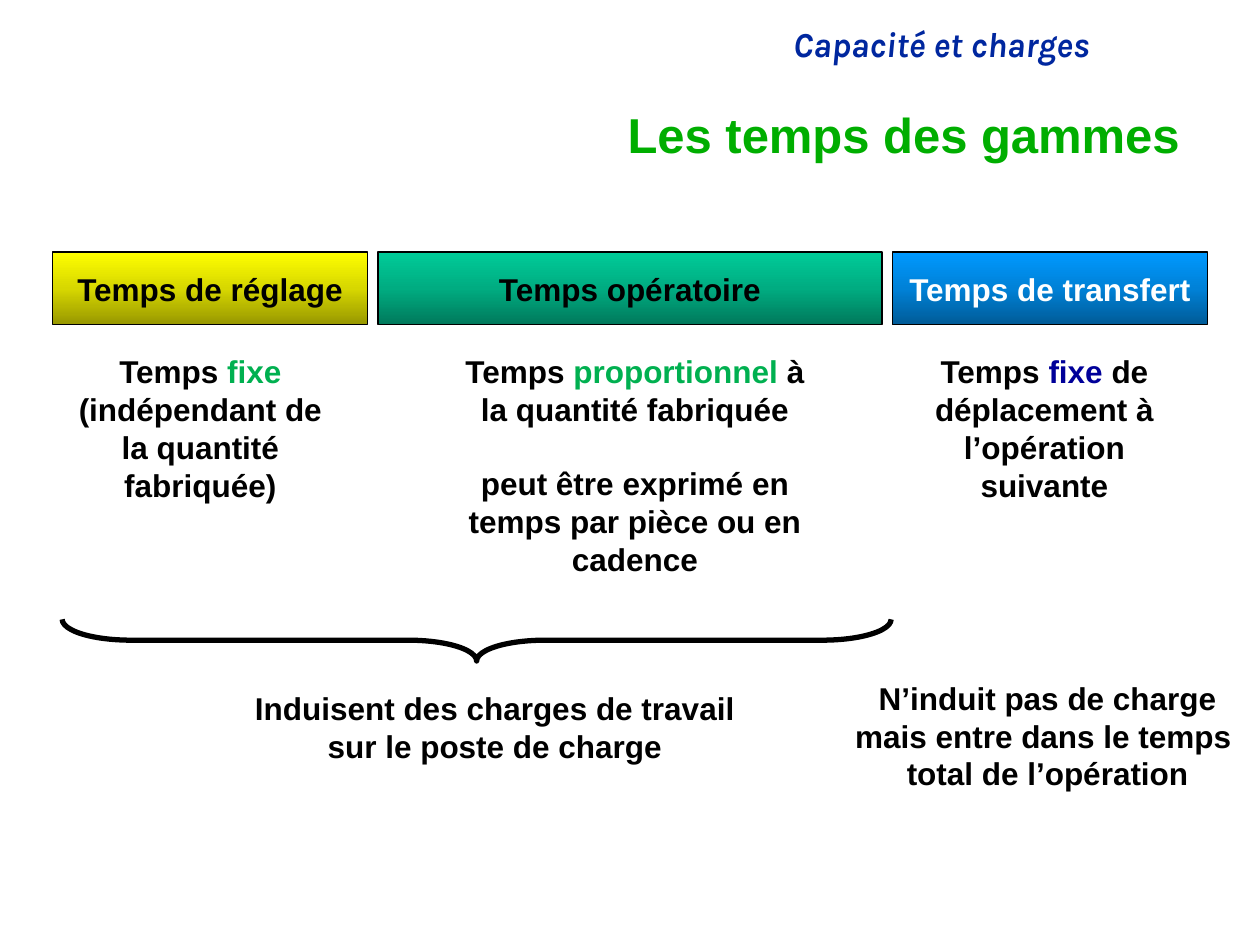
import copy
from dataclasses import dataclass

import pptx
import pptx.dml.color
import pptx.enum.shapes
import pptx.enum.text
import pptx.oxml.ns
import pptx.presentation
import pptx.slide
import pptx.text.text
import pptx.util

Cm = pptx.util.Cm
Pt = pptx.util.Pt
RGBColor = pptx.dml.color.RGBColor
Align = pptx.enum.text.PP_ALIGN
Anchor = pptx.enum.text.MSO_ANCHOR
ShapeType = pptx.enum.shapes.MSO_SHAPE

BLACK = RGBColor(0x00, 0x00, 0x00)
WHITE = RGBColor(0xFF, 0xFF, 0xFF)
NAVY = RGBColor(0x00, 0x27, 0x9F)
TITLE_GREEN = RGBColor(0x00, 0xAE, 0x00)
ACCENT_GREEN = RGBColor(0x00, 0xB0, 0x50)
ACCENT_BLUE = RGBColor(0x00, 0x00, 0x99)
YELLOWS = (RGBColor(0x97, 0x97, 0x00), RGBColor(0xD7, 0xD7, 0x00), RGBColor(0xFF, 0xFF, 0x00))
GREENS = (RGBColor(0x00, 0x79, 0x5B), RGBColor(0x00, 0xAC, 0x81), RGBColor(0x00, 0xCC, 0x99))
BLUES = (RGBColor(0x00, 0x5B, 0x97), RGBColor(0x00, 0x81, 0xD7), RGBColor(0x00, 0x99, 0xFF))

BODY_FONT = {"name": "Arial", "size": Pt(18), "bold": True}
TITLE_FONT = BODY_FONT | {"size": Pt(28)}
HEADER_FONT = {"name": "Karla", "size": Pt(20), "bold": True, "italic": True}
CENTRED = {"alignment": Align.CENTER}
RIGHT_ALIGNED = {"alignment": Align.RIGHT, "line_spacing": 0.9}

BAR_LEFT, BAR_TOP, BAR_HEIGHT, BAR_GAP = 1.06, 5.08, 1.47, 0.21
COLUMN_TOP = 6.98
BLANK_LINE = Pt(20.7)


@dataclass
class Run:
    text: str
    color: RGBColor = BLACK


@dataclass
class TimeBar:
    label: Run
    width: float
    gradient: tuple[RGBColor, ...]


@dataclass
class TextBlock:
    left: float
    top: float
    width: float
    height: float
    paragraphs: list[list[Run]]
    wrap: bool = True
    gap: pptx.util.Length = Pt(0)


HEADER = TextBlock(2.97, 0.43, 19.25, 1.02, [[Run("Capacité et charges", NAVY)]])
TITLE = TextBlock(3.91, 2.13, 20.12, 1.27, [[Run("Les temps des gammes", TITLE_GREEN)]])

BARS = [
    TimeBar(Run("Temps de réglage"), 6.35, YELLOWS),
    TimeBar(Run("Temps opératoire"), 10.16, GREENS),
    TimeBar(Run("Temps de transfert", WHITE), 6.35, BLUES),
]

BLOCKS = [
    TextBlock(1.27, COLUMN_TOP, 5.54, 3.3, [
        [Run("Temps "), Run("fixe", ACCENT_GREEN)],
        [Run("(indépendant de la quantité fabriquée)")],
    ]),
    TextBlock(9.09, COLUMN_TOP, 7.42, 4.83, [
        [Run("Temps "), Run("proportionnel", ACCENT_GREEN), Run(" à la quantité fabriquée")],
        [Run("peut être exprimé en temps par pièce ou en cadence")],
    ], gap=BLANK_LINE),
    TextBlock(17.98, COLUMN_TOP, 6.15, 3.3, [
        [Run("Temps "), Run("fixe", ACCENT_BLUE), Run(" de déplacement à l’opération suivante")],
    ]),
    TextBlock(4.88, 13.77, 10.19, 1.78, [
        [Run("Induisent des charges de travail")],
        [Run("sur le poste de charge")],
    ], wrap=False),
    TextBlock(16.94, 13.56, 8.36, 2.57, [
        [Run("N’induit pas de charge")],
        [Run("mais entre dans le temps \ntotal de l’opération")],
    ], wrap=False),
]


def apply_format(target: object, values: dict) -> None:
    for name, value in values.items():
        setattr(target, name, value)


def write_paragraph(
    paragraph: pptx.text.text._Paragraph, runs: list[Run], font: dict, layout: dict
) -> None:
    apply_format(paragraph, layout)
    for run in runs:
        for index, line in enumerate(run.text.split("\n")):
            if index:
                paragraph.add_line_break()
            text_run = paragraph.add_run()
            text_run.text = line
            apply_format(text_run.font, font)
            text_run.font.color.rgb = run.color


def add_text_block(
    slide: pptx.slide.Slide,
    block: TextBlock,
    font: dict = BODY_FONT,
    layout: dict = CENTRED,
    anchor: Anchor = Anchor.TOP,
) -> None:
    shape = slide.shapes.add_textbox(
        Cm(block.left), Cm(block.top), Cm(block.width), Cm(block.height)
    )
    frame = shape.text_frame
    apply_format(frame, {"word_wrap": block.wrap, "vertical_anchor": anchor})
    for index, runs in enumerate(block.paragraphs):
        paragraph = frame.add_paragraph() if index else frame.paragraphs[0]
        write_paragraph(paragraph, runs, font, layout)
        if index:
            paragraph.space_before = block.gap


def add_time_bar(slide: pptx.slide.Slide, bar: TimeBar, left: float) -> None:
    shape = slide.shapes.add_shape(
        ShapeType.RECTANGLE, Cm(left), Cm(BAR_TOP), Cm(bar.width), Cm(BAR_HEIGHT)
    )
    shape.shadow.inherit = False
    shape.fill.gradient()
    shape.fill.gradient_angle = 90
    stop_list = shape._element.spPr.find(".//" + pptx.oxml.ns.qn("a:gsLst"))
    stop_list.insert(1, copy.deepcopy(stop_list[0]))
    for stop, color, position in zip(shape.fill.gradient_stops, bar.gradient, (0, 0.5, 1)):
        stop.color.rgb = color
        stop.position = position
    shape.line.color.rgb = BLACK
    shape.line.width = Pt(0.75)
    frame = shape.text_frame
    apply_format(frame, {"word_wrap": False, "vertical_anchor": Anchor.MIDDLE})
    write_paragraph(frame.paragraphs[0], [bar.label], BODY_FONT, CENTRED)


def add_brace(slide: pptx.slide.Slide) -> None:
    brace = slide.shapes.add_shape(
        ShapeType.LEFT_BRACE, Cm(9.19), Cm(4.55), Cm(0.84), Cm(16.71)
    )
    brace.rotation = 270
    brace.adjustments[0] = 1.646
    brace.adjustments[1] = 0.5
    brace.shadow.inherit = False
    brace.fill.background()
    brace.line.color.rgb = BLACK
    brace.line.width = Pt(3)


def main() -> None:
    presentation = pptx.Presentation()
    presentation.slide_width = Cm(25.4)
    presentation.slide_height = Cm(19.05)
    slide = presentation.slides.add_slide(presentation.slide_layouts[6])

    add_text_block(slide, HEADER, HEADER_FONT, RIGHT_ALIGNED)
    add_text_block(slide, TITLE, TITLE_FONT, RIGHT_ALIGNED, Anchor.MIDDLE)
    left = BAR_LEFT
    for bar in BARS:
        add_time_bar(slide, bar, left)
        left += bar.width + BAR_GAP
    for block in BLOCKS:
        add_text_block(slide, block)
    add_brace(slide)

    presentation.save("out.pptx")


if __name__ == "__main__":
    main()
